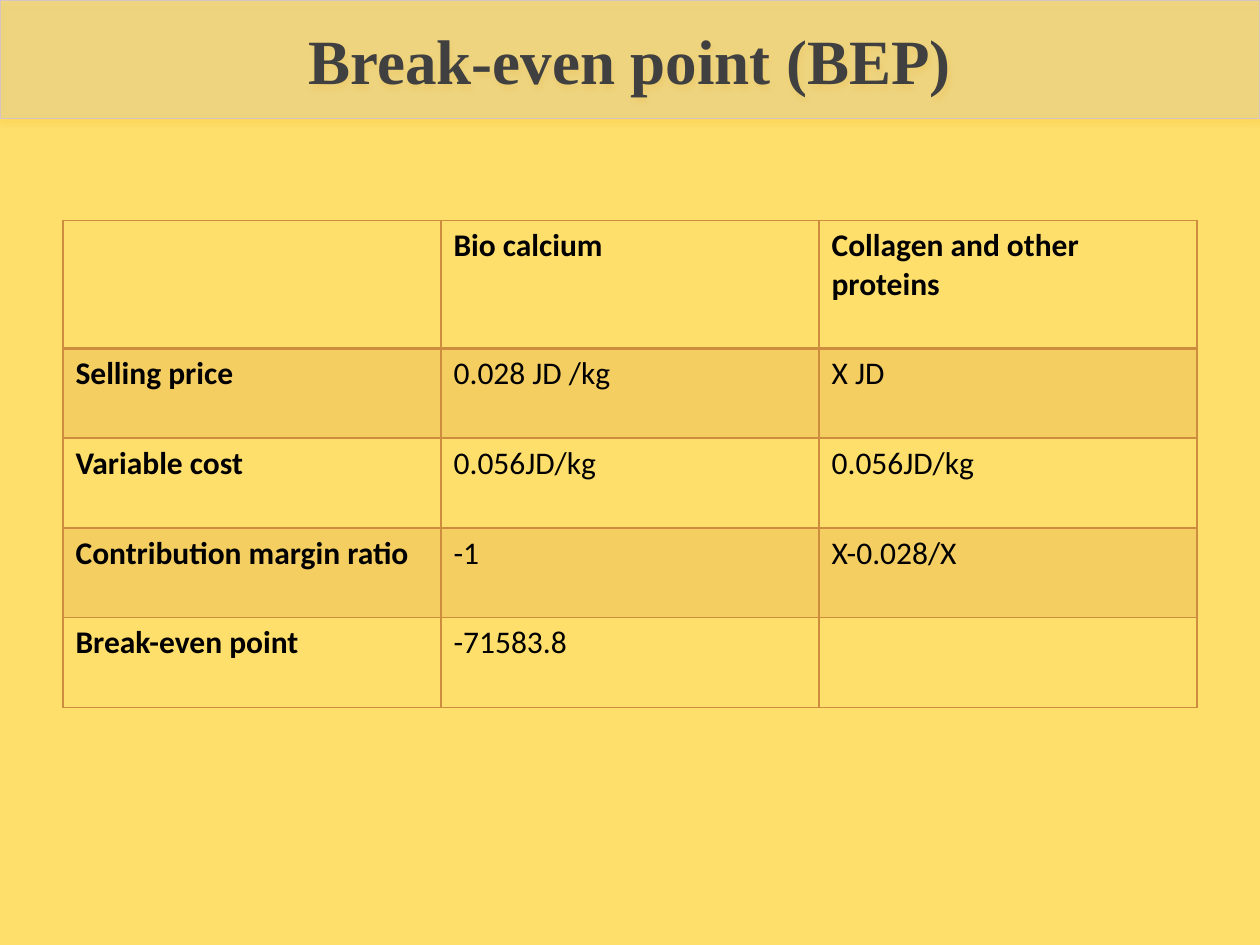
from dataclasses import dataclass

from lxml import etree
from pptx import Presentation
from pptx.dml.color import RGBColor
from pptx.enum.shapes import MSO_SHAPE
from pptx.enum.text import MSO_ANCHOR, PP_ALIGN
from pptx.oxml.ns import qn
from pptx.util import Cm, Pt

RECTANGLE = MSO_SHAPE.RECTANGLE
MIDDLE = MSO_ANCHOR.MIDDLE
CENTER = PP_ALIGN.CENTER

BLANK_LAYOUT = 6
ROWS = [
    ["", "Bio calcium", "Collagen and other proteins"],
    ["Selling price", "0.028 JD /kg", "X JD"],
    ["Variable cost", "0.056JD/kg", "0.056JD/kg"],
    ["Contribution margin ratio", "-1", "X-0.028/X"],
    ["Break-even point", "-71583.8", ""],
]


@dataclass(frozen=True)
class Theme:
    background: str = "FFDF6B"
    banner: str = "D3CAC4"
    banner_line: str = "D7C3C3"
    banner_shadow: str = "EEB000"
    title: str = "404040"
    text: str = "000000"
    accent: str = "CE8D3E"
    title_font: str = "Times New Roman"
    body_font: str = "Calibri"
    title_size: int = 36
    body_size: int = 18


def add_color(parent, color, opacity=100):
    element = etree.SubElement(parent, qn("a:srgbClr"), val=color)
    if opacity < 100:
        etree.SubElement(element, qn("a:alpha"), val=str(opacity * 1000))


def fill_solid(fill, color, opacity, properties):
    """Fill with a colour; properties is the XML element that holds the fill."""
    fill.solid()
    fill.fore_color.rgb = RGBColor.from_string(color)
    color_element = properties.find(qn("a:solidFill"))[0]
    etree.SubElement(color_element, qn("a:alpha"), val=str(opacity * 1000))


class SlideBuilder:
    def __init__(self, slide, theme):
        self.slide = slide
        self.theme = theme
        background = slide.background.fill
        background.solid()
        background.fore_color.rgb = RGBColor.from_string(theme.background)

    def add_run(self, paragraph, text, font_name, size, color, bold):
        run = paragraph.add_run()
        run.text = text
        run.font.name = font_name
        run.font.size = Pt(size)
        run.font.bold = bold
        run.font.color.rgb = RGBColor.from_string(color)

    def add_banner(self, text, width, height):
        theme = self.theme
        banner = self.slide.shapes.add_shape(RECTANGLE, 0, 0, width, height)
        properties = banner.fill._xPr
        fill_solid(banner.fill, theme.banner, 33, properties)
        banner.line.color.rgb = RGBColor.from_string(theme.banner_line)
        banner.line.width = Pt(0.75)
        banner.shadow.inherit = False
        shadow = etree.SubElement(
            properties.find(qn("a:effectLst")), qn("a:outerShdw"),
            blurRad=str(Pt(3.1)), dist=str(Pt(1.8)), dir=str(90 * 60000),
            rotWithShape="0")
        add_color(shadow, theme.banner_shadow, 35)
        banner.text_frame.vertical_anchor = MIDDLE
        paragraph = banner.text_frame.paragraphs[0]
        paragraph.alignment = CENTER
        self.add_run(paragraph, text, theme.title_font, theme.title_size,
                     theme.title, True)

    def set_borders(self, cell, widths):
        """Draw left, right, top and bottom borders with widths in points."""
        properties = cell._tc.get_or_add_tcPr()
        for index, (side, width) in enumerate(zip("LRTB", widths)):
            line = etree.Element(qn(f"a:ln{side}"), w=str(Pt(width)))
            add_color(etree.SubElement(line, qn("a:solidFill")),
                      self.theme.accent)
            properties.insert(index, line)

    def add_table(self, rows, left, top, width, header_height, row_height):
        theme = self.theme
        height = header_height + row_height * (len(rows) - 1)
        table = self.slide.shapes.add_table(
            len(rows), len(rows[0]), left, top, width, height).table
        table.first_row = False
        table.horz_banding = False
        for row_index, values in enumerate(rows):
            table.rows[row_index].height = (
                row_height if row_index else header_height)
            for column_index, text in enumerate(values):
                cell = table.cell(row_index, column_index)
                if row_index % 2:
                    fill_solid(cell.fill, theme.accent, 20,
                               cell._tc.get_or_add_tcPr())
                else:
                    cell.fill.background()
                top_width = 2 if row_index == 1 else 1
                bottom_width = 2 if row_index == 0 else 1
                self.set_borders(cell, (1, 1, top_width, bottom_width))
                if text:
                    bold = row_index == 0 or column_index == 0
                    self.add_run(cell.text_frame.paragraphs[0], text,
                                 theme.body_font, theme.body_size,
                                 theme.text, bold)


def main():
    presentation = Presentation()
    presentation.slide_width = Cm(25.4)
    presentation.slide_height = Cm(19.05)
    slide = presentation.slides.add_slide(
        presentation.slide_layouts[BLANK_LAYOUT])
    builder = SlideBuilder(slide, Theme())
    builder.add_table(ROWS, Cm(1.27), Cm(4.44), Cm(22.86),
                      header_height=Cm(2.58), row_height=Cm(1.81))
    builder.add_banner("Break-even point (BEP)",
                       presentation.slide_width, Cm(2.39))
    presentation.save("out.pptx")


if __name__ == "__main__":
    main()
